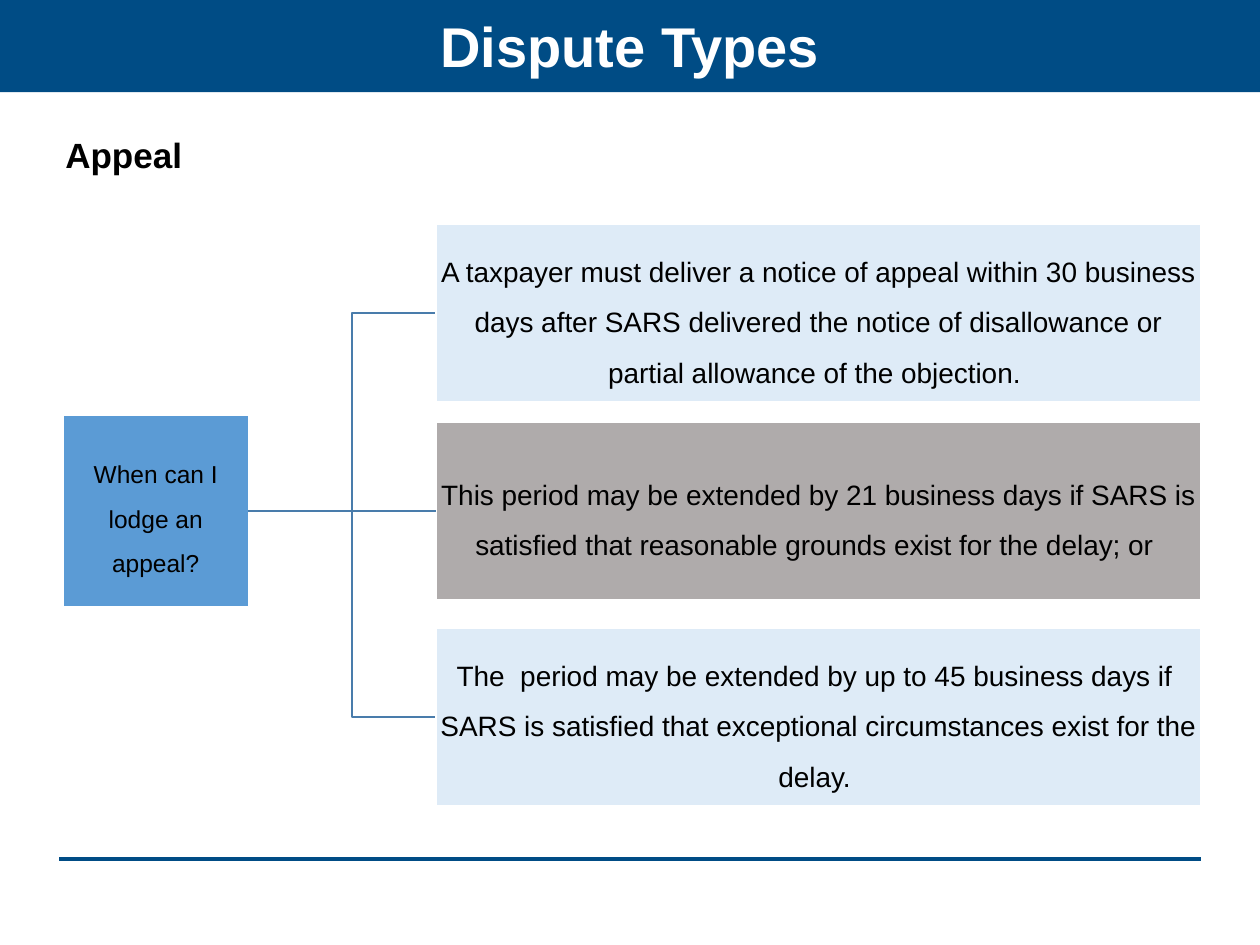
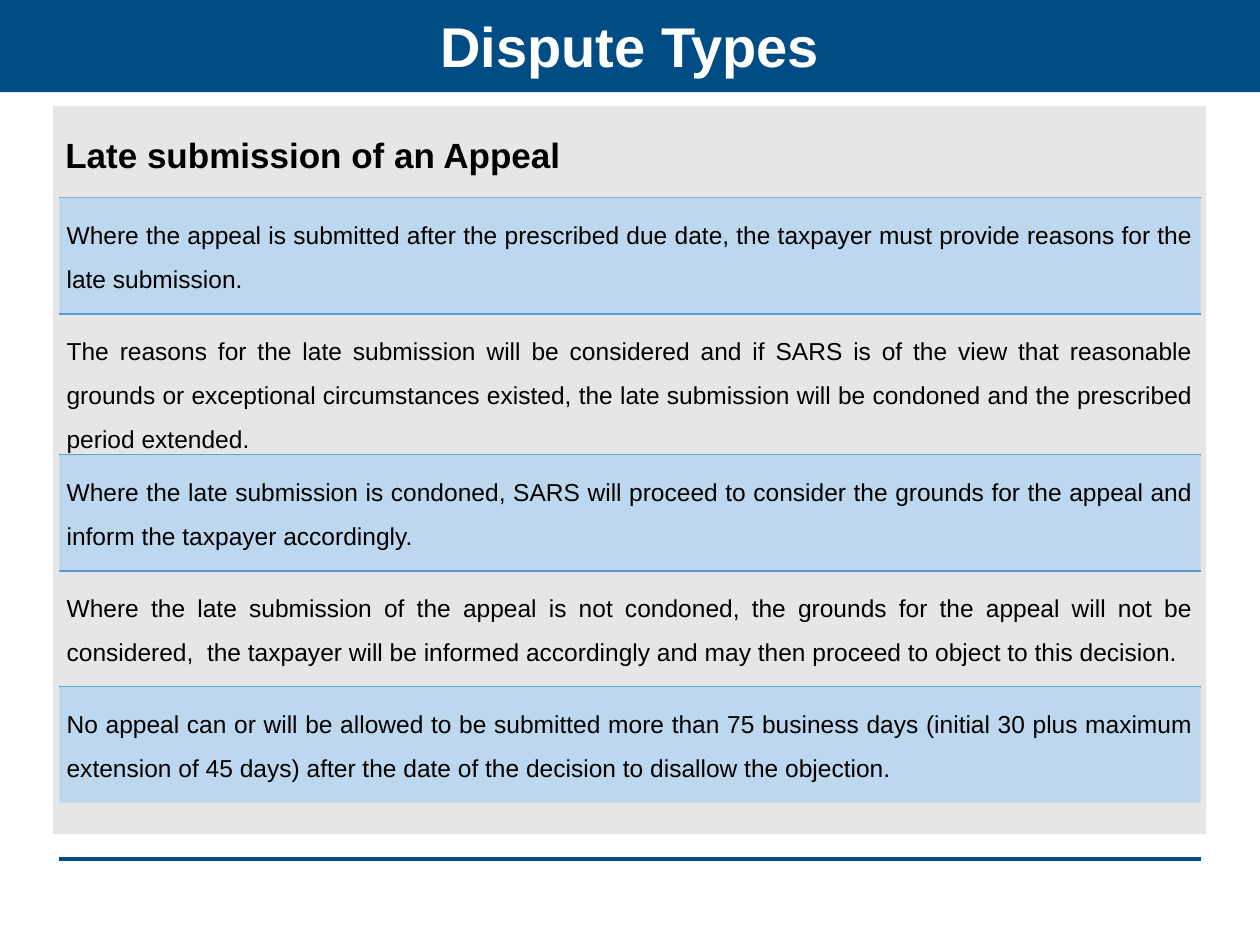
import dataclasses
import itertools

import pptx
import pptx.dml.color
import pptx.enum.shapes
import pptx.enum.text
import pptx.oxml
import pptx.util

Pt = pptx.util.Pt
ALIGN = pptx.enum.text.PP_ALIGN
ANCHOR = pptx.enum.text.MSO_ANCHOR
RECTANGLE = pptx.enum.shapes.MSO_SHAPE.RECTANGLE
STRAIGHT = pptx.enum.shapes.MSO_CONNECTOR.STRAIGHT


@dataclasses.dataclass(frozen=True)
class Theme:
    font: str = "Arial"
    navy: str = "004C85"
    blue: str = "5B9BD5"
    light_blue: str = "BDD7EE"
    pale_blue: str = "DEEBF7"
    bracket_blue: str = "497CAB"
    gray: str = "AFABAB"
    light_gray: str = "E7E6E6"
    white: str = "FFFFFF"
    black: str = "000000"
    title_size: int = 32
    heading_size: int = 20
    answer_size: int = 16
    body_size: int = 14


@dataclasses.dataclass(frozen=True)
class Box:
    left: float
    top: float
    width: float
    height: float

    @property
    def middle(self):
        return self.top + self.height / 2

    def points(self):
        return [Pt(value) for value in (self.left, self.top, self.width, self.height)]


THEME = Theme()
SLIDE_WIDTH, SLIDE_HEIGHT = 720, 540
BAND = Box(0, -1.4, SLIDE_WIDTH, 54)
PANEL = Box(30.25, 60.5, 659, 416)
DIAGRAM = Box(36, 128.2, 650.2, 332.3)
ROWS = Box(33.9, 113, 652.2, 345.7)
FOOTER_TOP = 491

TITLE = "Dispute Types"
QUESTION = "When can I lodge an appeal?"
ANSWERS = [
    "A taxpayer must deliver a notice of appeal within 30 business days after SARS "
    "delivered the notice of disallowance or partial allowance of the objection. ",
    "This period may be extended by 21 business days if SARS is satisfied that "
    "reasonable grounds exist for the delay; or ",
    "The  period may be extended by up to 45 business days if  SARS is satisfied that "
    "exceptional circumstances exist for the delay. ",
]
LATE_RULES = [
    "Where the appeal is submitted after the prescribed due date, the taxpayer must "
    "provide reasons for the late submission.",
    "The reasons for the late submission will be considered and if SARS is of the view "
    "that reasonable grounds or exceptional circumstances existed, the late submission "
    "will be condoned and the prescribed period extended.",
    "Where the late submission is condoned, SARS will proceed to consider the grounds "
    "for the appeal and inform the taxpayer accordingly.",
    "Where the late submission of the appeal is not condoned, the grounds for the appeal "
    "will not be considered,  the taxpayer will be informed accordingly and may then "
    "proceed to object to this decision.",
    "No appeal can or will be allowed to be submitted more than 75 business days (initial "
    "30 plus maximum extension of 45 days) after the date of the decision to disallow "
    "the objection.",
]


def rgb(color):
    return pptx.dml.color.RGBColor.from_string(color)


def set_line(shape, color, width):
    shape.line.color.rgb = rgb(color)
    shape.line.width = Pt(width)


def add_rectangle(slide, box, fill=None, outline=None):
    shape = slide.shapes.add_shape(RECTANGLE, *box.points())
    shape.shadow.inherit = False
    if fill:
        shape.fill.solid()
        shape.fill.fore_color.rgb = rgb(fill)
    else:
        shape.fill.background()
    if outline:
        set_line(shape, outline, 1)
    else:
        shape.line.fill.background()
    return shape


def add_line(slide, start, end, color, width):
    line = slide.shapes.add_connector(STRAIGHT, *(Pt(value) for value in (*start, *end)))
    line._element.spPr.append(pptx.oxml.parse_xml(
        '<a:effectLst xmlns:a="http://schemas.openxmlformats.org/drawingml/2006/main"/>'))
    set_line(line, color, width)
    return line


def write(shape, text, size, color=THEME.black, bold=False, align=ALIGN.CENTER,
          anchor=ANCHOR.MIDDLE, spacing=1.5, after=0, inset=(7.2, 3.6)):
    frame = shape.text_frame
    frame.word_wrap = True
    frame.vertical_anchor = anchor
    frame.margin_left = frame.margin_right = Pt(inset[0])
    frame.margin_top = frame.margin_bottom = Pt(inset[1])
    paragraph = frame.paragraphs[0]
    paragraph.alignment = align
    paragraph.line_spacing = spacing
    paragraph.space_after = Pt(after)
    run = paragraph.add_run()
    run.text = text
    run.font.name = THEME.font
    run.font.size = Pt(size)
    run.font.bold = bold
    run.font.color.rgb = rgb(color)


def add_base_slide(presentation, heading, panel_fill):
    """Add a slide with the shared footer line, title band and headed panel."""
    slide = presentation.slides.add_slide(presentation.slide_layouts[6])
    add_line(slide, (ROWS.left, FOOTER_TOP), (ROWS.left + ROWS.width, FOOTER_TOP),
             THEME.navy, 2)
    band = add_rectangle(slide, BAND, THEME.navy)
    write(band, TITLE, THEME.title_size, THEME.white, bold=True, spacing=1, inset=(7.2, 7.2))
    panel = add_rectangle(slide, PANEL, panel_fill)
    write(panel, heading, THEME.heading_size, bold=True, align=ALIGN.JUSTIFY,
          anchor=ANCHOR.TOP)
    return slide


def add_bracket(slide, trunk, right, top, bottom):
    """Draw the open bracket that links the first and last answers."""
    builder = slide.shapes.build_freeform(Pt(right), Pt(top))
    corners = [(trunk, top), (trunk, bottom), (right, bottom)]
    builder.add_line_segments([(Pt(x), Pt(y)) for x, y in corners], close=False)
    bracket = builder.convert_to_shape()
    bracket.shadow.inherit = False
    bracket.fill.background()
    set_line(bracket, THEME.bracket_blue, 1)


def add_question_tree(slide, box):
    answer_width, answer_height = 437, 101.5
    answer_left = box.left + box.width - answer_width
    answer_boxes = [Box(answer_left, box.top + offset, answer_width, answer_height)
                    for offset in (0, 113, 230.8)]
    first, second, third = answer_boxes
    question_height = 109.4
    question_box = Box(box.left, second.middle - question_height / 2, 106, question_height)

    add_bracket(slide, box.left + 165, answer_left, first.middle, third.middle)
    question = add_rectangle(slide, question_box, THEME.blue, THEME.white)
    write(question, QUESTION, THEME.body_size, after=5, inset=(0.7, 0.7))
    answers = []
    fills = itertools.cycle([THEME.pale_blue, THEME.gray])
    for answer_box, text, fill in zip(answer_boxes, ANSWERS, fills):
        answer = add_rectangle(slide, answer_box, fill, THEME.white)
        write(answer, text, THEME.answer_size, after=5.6, inset=(0.7, 0.7))
        answers.append(answer)

    link = add_line(slide, (question_box.left + question_box.width, second.middle),
                    (answer_left, second.middle), THEME.bracket_blue, 1)
    link.begin_connect(question, 3)
    link.end_connect(answers[1], 1)


def add_rule_rows(slide, box):
    """Stack the rules, the second one taller, with every other row shaded."""
    tall_height = 80.7
    row_height = (box.height - tall_height) / (len(LATE_RULES) - 1)
    top = box.top
    for index, text in enumerate(LATE_RULES):
        height = tall_height if index == 1 else row_height
        add_line(slide, (box.left, top), (box.left + box.width, top), THEME.blue, 1)
        fill = THEME.light_blue if index % 2 == 0 else None
        row = add_rectangle(slide, Box(box.left, top, box.width, height), fill)
        write(row, text, THEME.body_size, align=ALIGN.JUSTIFY, anchor=ANCHOR.TOP,
              after=4.9, inset=(4.2, 4.2))
        top += height


def main():
    presentation = pptx.Presentation()
    presentation.slide_width = Pt(SLIDE_WIDTH)
    presentation.slide_height = Pt(SLIDE_HEIGHT)
    add_question_tree(add_base_slide(presentation, "Appeal", THEME.white), DIAGRAM)
    add_rule_rows(add_base_slide(presentation, "Late submission of an Appeal",
                                 THEME.light_gray), ROWS)
    presentation.save("out.pptx")


if __name__ == "__main__":
    main()
